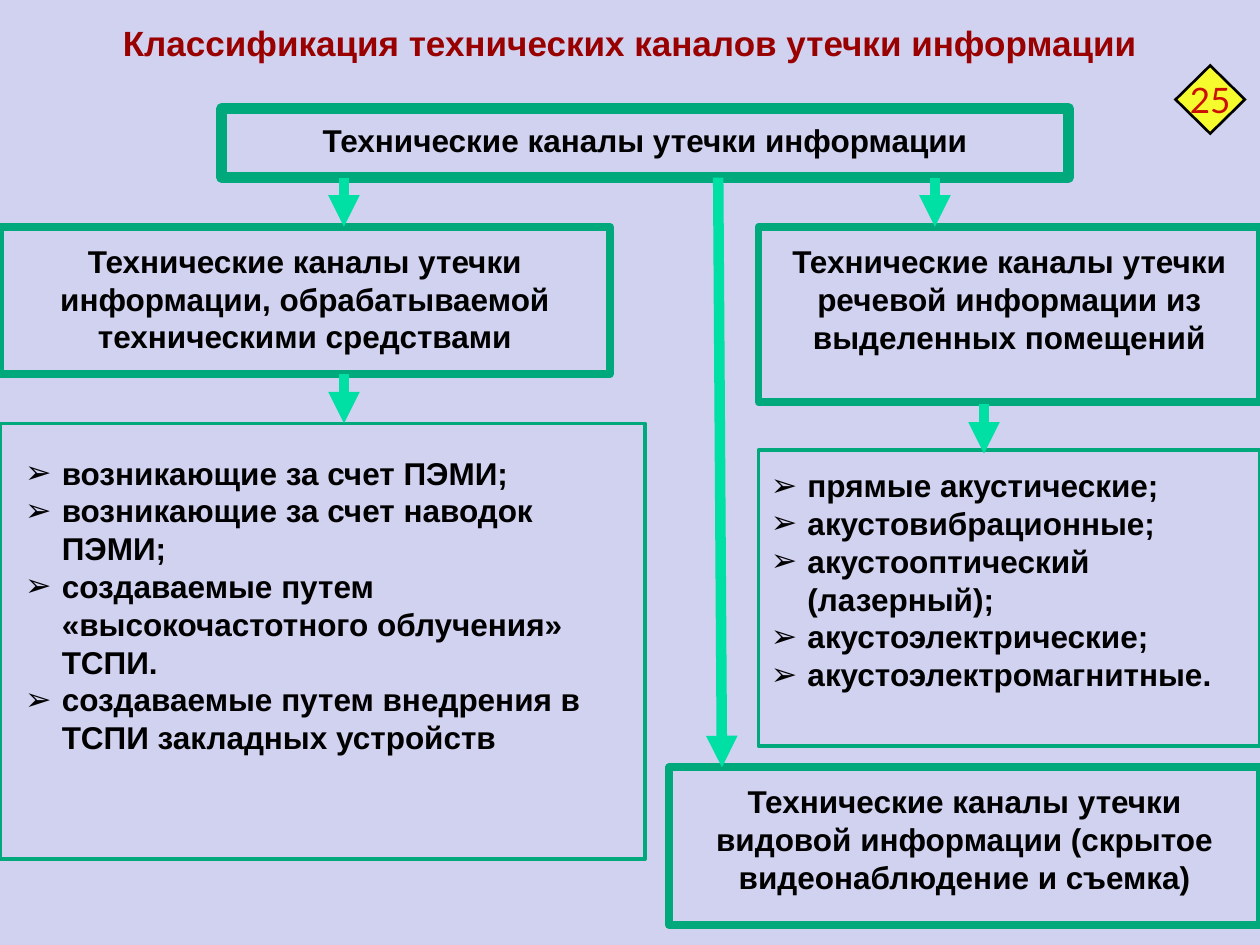
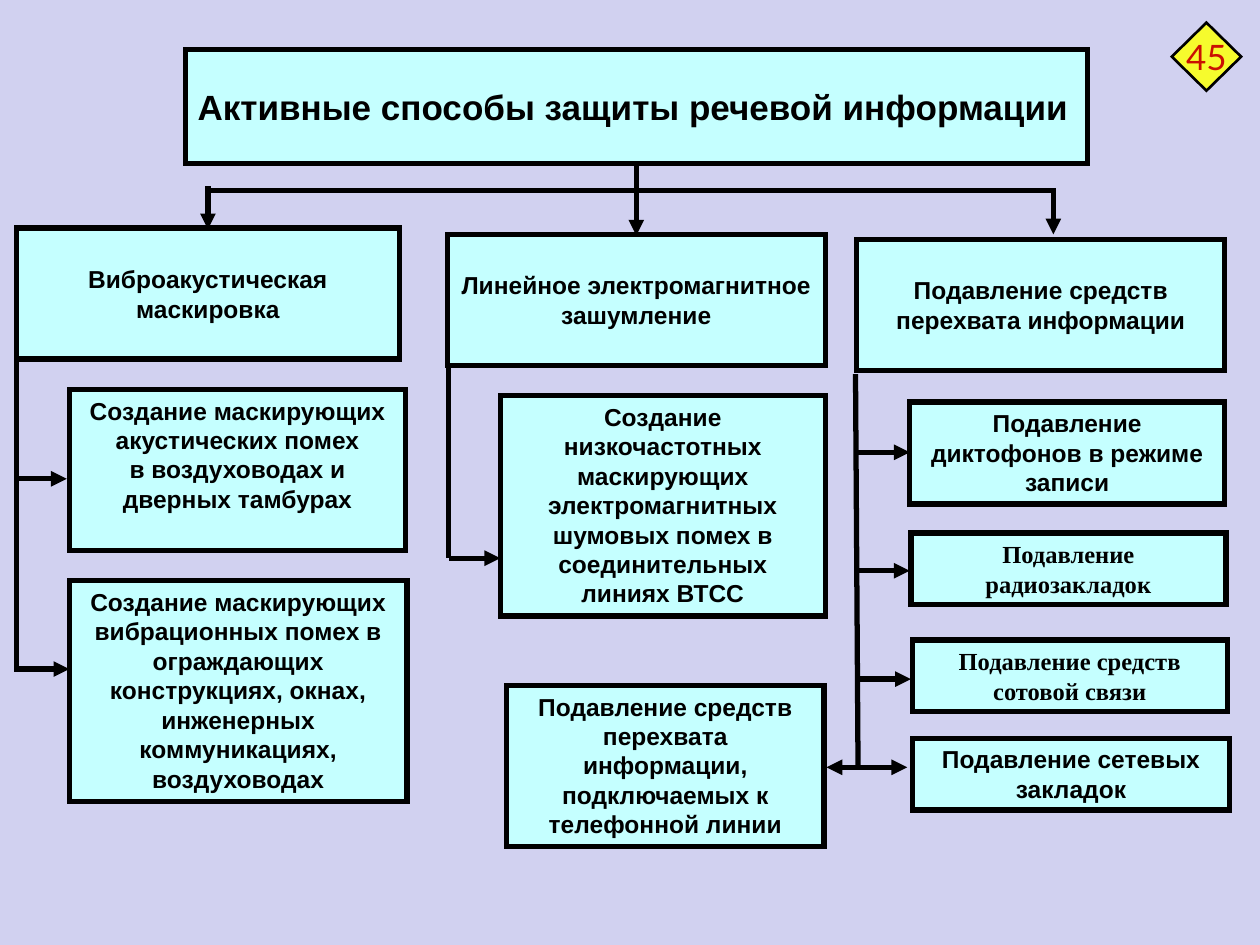
from lxml import etree
from pptx import Presentation
from pptx.dml.color import RGBColor
from pptx.enum.shapes import MSO_CONNECTOR as Connector, MSO_SHAPE as Shape
from pptx.enum.text import MSO_ANCHOR as Anchor, PP_ALIGN as Align
from pptx.oxml.ns import qn
from pptx.util import Inches, Pt

LAVENDER = RGBColor(0xD1, 0xD1, 0xF0)
DARK_RED = RGBColor(0x99, 0x00, 0x00)
GREEN = RGBColor(0x00, 0xA9, 0x7C)
MINT = RGBColor(0x00, 0xDF, 0xA4)
AQUA = RGBColor(0xC5, 0xFF, 0xFF)
YELLOW = RGBColor(0xF6, 0xFB, 0x2D)
RED = RGBColor(0xCA, 0x10, 0x02)
BLACK = RGBColor(0x00, 0x00, 0x00)

LINE_HEIGHT = 1.2
BULLET_INDENT = Inches(0.29)


class Deck:
    """Shared style and the slide being drawn."""

    def __init__(self):
        self.presentation = Presentation()
        self.presentation.slide_width = Inches(10)
        self.presentation.slide_height = Inches(7.5)
        self.slide = None

    def new_slide(self):
        self.slide = self.presentation.slides.add_slide(self.presentation.slide_layouts[6])
        fill = self.slide.background.fill
        fill.solid()
        fill.fore_color.rgb = LAVENDER

    def set_text(self, shape, text, size, color=BLACK, font="Arial", bold=True,
                 align=Align.CENTER, anchor=Anchor.TOP, inset=(0.1, 0.05), wrap=True):
        """Fill a shape with text; each line of the text is a paragraph."""
        frame = shape.text_frame
        frame.text = text
        frame.word_wrap = wrap
        frame.vertical_anchor = anchor
        frame.margin_left = frame.margin_right = Inches(inset[0])
        frame.margin_top = frame.margin_bottom = Inches(inset[1])
        for paragraph in frame.paragraphs:
            paragraph.alignment = align
            paragraph.line_spacing = Pt(size * LINE_HEIGHT)
            for run in paragraph.runs:
                run.font.size = Pt(size)
                run.font.name = font
                run.font.bold = bold
                run.font.color.rgb = color

    def title(self, text):
        box = self.slide.shapes.add_textbox(Inches(0), Inches(0.14), Inches(10), Inches(0.4))
        self.set_text(box, text, 20, DARK_RED, anchor=Anchor.MIDDLE)

    def outline(self, shape, color, width, join=None, arrow=False):
        shape.line.color.rgb = color
        shape.line.width = Pt(width)
        line_xml = shape._element.spPr.find(qn("a:ln"))
        if join:
            etree.SubElement(line_xml, qn(f"a:{join}"))
        if arrow:
            etree.SubElement(line_xml, qn("a:tailEnd"), type="triangle")

    def shape(self, kind, place, fill, color, width, join):
        shape = self.slide.shapes.add_shape(kind, *map(Inches, place))
        shape.shadow.inherit = False
        if fill is None:
            shape.fill.background()
        else:
            shape.fill.solid()
            shape.fill.fore_color.rgb = fill
        self.outline(shape, color, width, join)
        return shape

    def frame(self, place, text, width=4.5, **style):
        """Unfilled green frame."""
        shape = self.shape(Shape.RECTANGLE, place, None, GREEN, width, "round")
        self.set_text(shape, text, 18, **style)
        return shape

    def bullet_frame(self, place, items, inset):
        shape = self.frame(place, "\n".join(items), 2, align=Align.LEFT, inset=inset)
        for paragraph in shape.text_frame.paragraphs:
            properties = paragraph._p.get_or_add_pPr()
            properties.set("marL", str(BULLET_INDENT))
            properties.set("indent", str(-BULLET_INDENT))
            etree.SubElement(properties, qn("a:buFont"), typeface="Arial")
            etree.SubElement(properties, qn("a:buChar"), char="➢")

    def card(self, place, text, size=14, **style):
        """Aqua box with a black border."""
        shape = self.shape(Shape.RECTANGLE, place, AQUA, BLACK, 3, "miter")
        self.set_text(shape, text, size, **style)

    def line(self, start, end, color=BLACK, width=3, arrow=True):
        connector = self.slide.shapes.add_connector(
            Connector.STRAIGHT, *map(Inches, (*start, *end)))
        self.outline(connector, color, width, arrow=arrow)
        etree.SubElement(connector._element.spPr, qn("a:effectLst"))

    def branches(self, top, bottom, targets):
        """Vertical trunk with an arrow to each target point."""
        self.line(top, bottom, arrow=False)
        for x, y in targets:
            self.line((bottom[0], y), (x, y))

    def number(self, left, top, text):
        shape = self.shape(Shape.DIAMOND, (left, top, 0.55, 0.54), YELLOW, BLACK, 1.5, "miter")
        self.set_text(shape, text, 20, RED, "Lato", bold=False, anchor=Anchor.MIDDLE,
                      inset=(0, 0), wrap=False)


def build_channels(deck):
    deck.new_slide()
    deck.title("Классификация технических каналов утечки информации")

    # Classes of channels
    deck.frame((1.76, 0.86, 6.72, 0.55), "Технические каналы утечки информации", 6,
               inset=(0.1, 0.1))
    classes = [
        ((0, 1.8, 4.84, 1.17),
         "Технические каналы утечки информации, обрабатываемой техническими средствами"),
        ((6.02, 1.8, 3.98, 1.39),
         "Технические каналы утечки речевой информации из выделенных помещений"),
        ((5.31, 6.09, 4.69, 1.25),
         "Технические каналы утечки видовой информации (скрытое видеонаблюдение и съемка)"),
    ]
    for place, text in classes:
        deck.frame(place, text, inset=(0.2, 0.12))

    # Lists of channels
    deck.bullet_frame((0, 3.36, 5.12, 3.46), [
        "возникающие за счет ПЭМИ;",
        "возникающие за счет наводок\vПЭМИ;",
        "создаваемые путем\v«высокочастотного облучения»\vТСПИ.",
        "создаваемые путем внедрения в\vТСПИ закладных устройств",
    ], inset=(0.2, 0.24))
    deck.bullet_frame((6.02, 3.57, 3.98, 2.35), [
        "прямые акустические;",
        "акустовибрационные;",
        "акустооптический\v(лазерный);",
        "акустоэлектрические;",
        "акустоэлектромагнитные.",
    ], inset=(0.1, 0.13))

    # Short arrows, then the long one
    for x, y in [(2.73, 1.41), (7.42, 1.41), (2.73, 2.97), (7.81, 3.21)]:
        deck.line((x, y), (x, y + 0.39), MINT, 6)
    deck.line((5.7, 1.41), (5.73, 6.09), MINT, 6)

    deck.number(9.33, 0.52, "25")


def build_protection(deck):
    deck.new_slide()

    # Root and the three methods
    deck.line((5.05, 1.29), (5.05, 1.87))
    deck.card((1.47, 0.39, 7.16, 0.91), "Активные способы защиты речевой информации", 20,
              align=Align.LEFT, anchor=Anchor.MIDDLE, wrap=False)
    methods = [
        ((0.13, 1.81, 3.04, 1.04), "Виброакустическая маскировка"),
        ((3.55, 1.86, 3, 1.04), "Линейное электромагнитное зашумление"),
        ((6.8, 1.9, 2.92, 1.04), "Подавление средств перехвата информации"),
    ]
    for place, text in methods:
        deck.card(place, text, anchor=Anchor.MIDDLE)
    deck.line((1.63, 1.51), (8.38, 1.51), arrow=False)
    deck.line((1.65, 1.48), (1.65, 1.82))
    deck.line((8.36, 1.53), (8.36, 1.86))

    # Means of each method
    serif = "Times New Roman"
    means = [
        ((0.55, 3.09, 2.67, 1.28), "Arial",
         "Создание маскирующих акустических помех\nв воздуховодах и дверных тамбурах"),
        ((0.55, 4.61, 2.68, 1.75), "Arial",
         "Создание маскирующих вибрационных помех в ограждающих конструкциях, окнах, "
         "инженерных коммуникациях, воздуховодах"),
        ((3.97, 3.14, 2.58, 1.75), "Arial",
         "Создание низкочастотных маскирующих электромагнитных шумовых помех "
         "в соединительных линиях ВТСС"),
        ((4.02, 5.44, 2.52, 1.28), "Arial",
         "Подавление средств перехвата информации, подключаемых к телефонной линии"),
        ((7.22, 3.19, 2.5, 0.81), "Arial", "Подавление диктофонов в режиме записи"),
        ((7.23, 4.23, 2.5, 0.57), serif, "Подавление радиозакладок"),
        ((7.24, 5.08, 2.5, 0.57), serif, "Подавление средств сотовой связи"),
        ((7.24, 5.86, 2.52, 0.57), "Arial", "Подавление сетевых закладок"),
    ]
    for place, font, text in means:
        deck.card(place, text, font=font)

    # Branches from methods to means
    deck.branches((0.13, 2.75), (0.13, 5.33), [(0.53, 3.8), (0.55, 5.31)])
    deck.branches((3.56, 2.92), (3.56, 4.43), [(3.97, 4.43)])
    deck.branches((6.79, 2.97), (6.81, 6.09),
                  [(7.22, 3.59), (7.22, 4.53), (7.23, 5.39), (7.2, 6.09), (6.56, 6.09)])

    deck.number(9.3, 0.18, "45")


def main():
    deck = Deck()
    build_channels(deck)
    build_protection(deck)
    deck.presentation.save("out.pptx")


if __name__ == "__main__":
    main()
